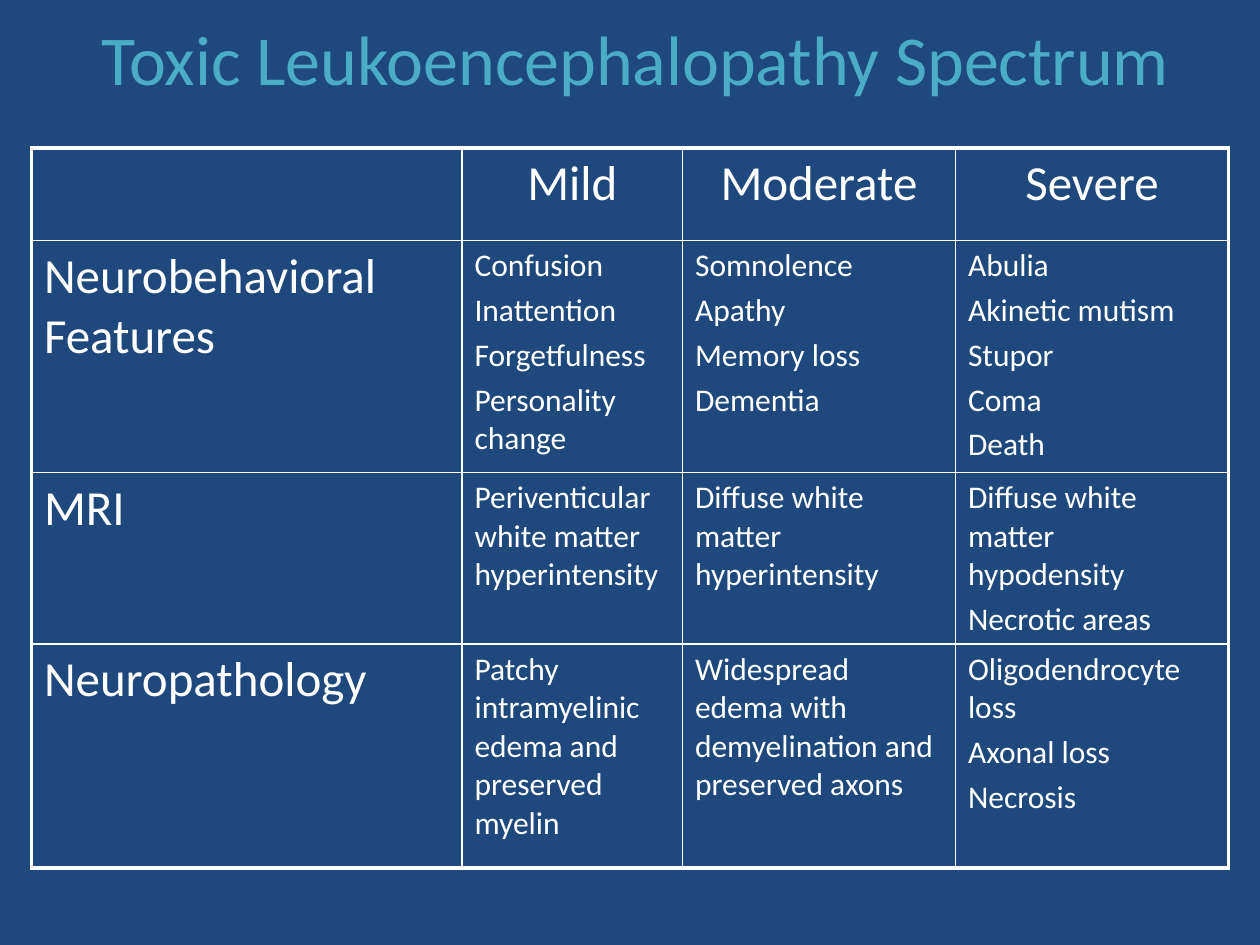
import pptx
import pptx.util
import pptx.dml.color
import pptx.enum.text
import pptx.oxml
import pptx.oxml.ns

Pt = pptx.util.Pt
ALIGN = pptx.enum.text.PP_ALIGN
ANCHOR = pptx.enum.text.MSO_ANCHOR

COLORS = {"background": "1F497D", "title": "4BACC6", "text": "FFFFFF", "rule": "FFFFFF"}
FONT = "Calibri"
HEADING_SIZE, FINDING_SIZE = 28, 18
OUTER_RULE, INNER_RULE = 2.25, 1

COLUMN_WIDTHS = [246, 126, 156, 156]
ROW_HEIGHTS = [53, 132.5, 98, 128]

# Each cell is a list of paragraphs
SPECTRUM = [
    [[], ["Mild"], ["Moderate"], ["Severe"]],
    [
        ["Neurobehavioral Features"],
        ["Confusion", "Inattention", "Forgetfulness", "Personality change"],
        ["Somnolence", "Apathy", "Memory loss", "Dementia"],
        ["Abulia", "Akinetic mutism", "Stupor", "Coma", "Death"],
    ],
    [
        ["MRI"],
        ["Periventicular white matter hyperintensity"],
        ["Diffuse white matter hyperintensity"],
        ["Diffuse white matter hypodensity", "Necrotic areas"],
    ],
    [
        ["Neuropathology"],
        ["Patchy intramyelinic edema and preserved myelin"],
        ["Widespread edema with demyelination and preserved axons"],
        ["Oligodendrocyte loss", "Axonal loss", "Necrosis"],
    ],
]


def rgb(name):
    return pptx.dml.color.RGBColor.from_string(COLORS[name])


def write(frame, lines, size, color="text", align=ALIGN.LEFT, space_before=0):
    """Fill a text frame with one paragraph per line."""
    frame.word_wrap = True
    for index, line in enumerate(lines or [""]):
        paragraph = frame.paragraphs[0] if index == 0 else frame.add_paragraph()
        paragraph.alignment = align
        paragraph.space_before = Pt(space_before)
        paragraph.font.size = Pt(size)
        if line:
            run = paragraph.add_run()
            run.text = line
            run.font.name = FONT
            run.font.size = Pt(size)
            run.font.color.rgb = rgb(color)


def rule_cell(cell, widths):
    """Draw the cell borders; widths maps L, R, T, B to points."""
    properties = cell._tc.get_or_add_tcPr()
    for side, width in widths.items():
        properties.append(pptx.oxml.parse_xml(
            f'<a:ln{side} {pptx.oxml.ns.nsdecls("a")} w="{int(Pt(width))}">'
            f'<a:solidFill><a:srgbClr val="{COLORS["rule"]}"/></a:solidFill>'
            f'<a:prstDash val="solid"/></a:ln{side}>'))


def add_title(slide, title):
    box = slide.shapes.add_textbox(Pt(6), Pt(0), Pt(714), Pt(66))
    box.text_frame.vertical_anchor = ANCHOR.MIDDLE
    write(box.text_frame, [title], size=40, color="title", align=ALIGN.CENTER)


def add_spectrum_table(slide):
    last_row, last_column = len(ROW_HEIGHTS) - 1, len(COLUMN_WIDTHS) - 1
    frame = slide.shapes.add_table(
        len(ROW_HEIGHTS), len(COLUMN_WIDTHS), Pt(18), Pt(84.5),
        Pt(sum(COLUMN_WIDTHS)), Pt(sum(ROW_HEIGHTS)))
    table = frame.table
    table.first_row = table.horz_banding = False
    for column, width in zip(table.columns, COLUMN_WIDTHS):
        column.width = Pt(width)
    for row, height in zip(table.rows, ROW_HEIGHTS):
        row.height = Pt(height)

    for r, severities in enumerate(SPECTRUM):
        for c, lines in enumerate(severities):
            cell = table.cell(r, c)
            size = HEADING_SIZE if r == 0 or c == 0 else FINDING_SIZE
            write(cell.text_frame, lines, size=size, space_before=size * 0.2,
                  align=ALIGN.CENTER if r == 0 else ALIGN.LEFT)
            # Heavy rules run only round the outside
            on_edge = {"L": c == 0, "R": c == last_column,
                       "T": r == 0, "B": r == last_row}
            rule_cell(cell, {side: OUTER_RULE if outer else INNER_RULE
                             for side, outer in on_edge.items()})
            cell.fill.background()


def main():
    deck = pptx.Presentation()
    deck.slide_width, deck.slide_height = Pt(720), Pt(540)
    slide = deck.slides.add_slide(deck.slide_layouts[6])
    slide.background.fill.solid()
    slide.background.fill.fore_color.rgb = rgb("background")

    add_title(slide, "Toxic Leukoencephalopathy Spectrum")
    add_spectrum_table(slide)
    deck.save("out.pptx")


if __name__ == "__main__":
    main()
